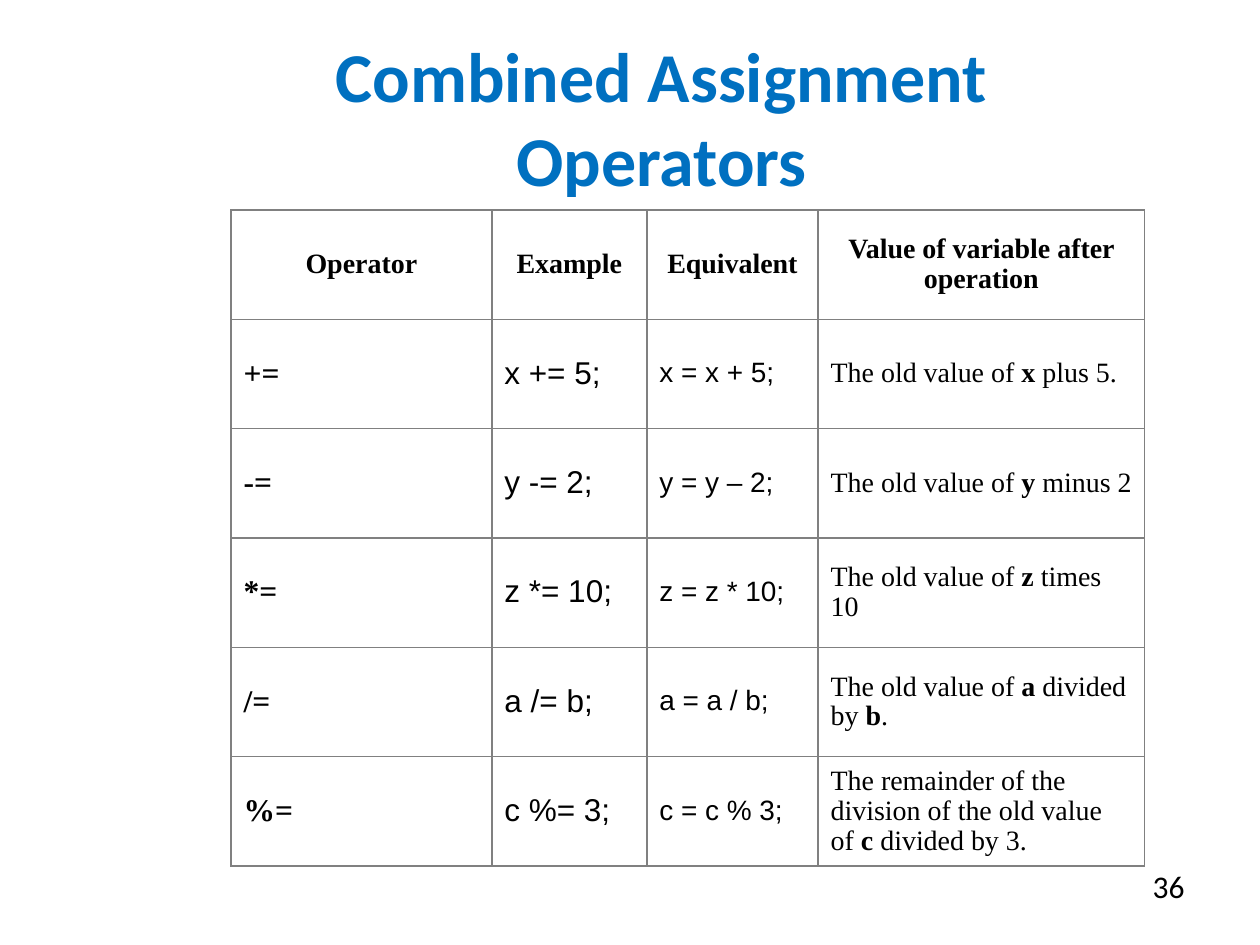
from lxml.etree import SubElement
from pptx import Presentation
from pptx.dml.color import RGBColor
from pptx.enum.text import MSO_ANCHOR, PP_ALIGN
from pptx.oxml.ns import qn
from pptx.util import Inches, Pt

COLS, ROWS = 60, 45
SERIF, SANS, BODY = "Times New Roman", "Arial", "Calibri"
HEADS = ["Operator", "Example", "Equivalent",
         "Value of variable after operation"]
# Underscores enclose bold words.
RULES = [
    ["+=", "x += 5;", "x = x + 5;", "The old value of _x_ plus 5."],
    ["-=", "y -= 2;", "y = y – 2;", "The old value of _y_ minus 2"],
    ["*=", "z *= 10;", "z = z * 10;", "The old value of _z_ times 10"],
    ["/=", "a /= b;", "a = a / b;", "The old value of _a_ divided by _b_."],
    ["%=", "c %= 3;", "c = c % 3;",
     "The remainder of the division of the old value of _c_ divided by 3."],
]
HEAD = dict(name=SERIF, size=Pt(16), bold=True)
STYLES = [
    dict(name=SERIF, size=Pt(18), bold=True),
    dict(name=SANS, size=Pt(18), bold=False),
    dict(name=SANS, size=Pt(16), bold=False),
    dict(name=SERIF, size=Pt(16), bold=False),
]


def color(code):
    return RGBColor.from_string(code)


class Deck:
    ink, edge, paper = "000000", "808080", "FFFFFF"

    def __init__(self):
        self.show = Presentation()
        self.show.slide_width, self.show.slide_height = Inches(10), Inches(7.5)
        self.slide = self.show.slides.add_slide(self.show.slide_layouts[6])

    def place(self, left, top, width, height):
        """Turn grid columns and rows into slide lengths."""
        across = self.show.slide_width / COLS
        down = self.show.slide_height / ROWS
        return (round(left * across), round(top * down),
                round(width * across), round(height * down))

    def words(self, para, text, font, align, ink=None):
        """Fill a paragraph, with every second part in bold."""
        para.alignment = align
        for index, part in enumerate(text.split("_")):
            run = para.add_run()
            run.text = part
            for key, value in font.items():
                setattr(run.font, key, value)
            if index % 2:
                run.font.bold = True
            run.font.color.rgb = color(ink or self.ink)

    def text(self, area, text, font, align, anchor=MSO_ANCHOR.TOP, ink=None):
        frame = self.slide.shapes.add_textbox(*self.place(*area)).text_frame
        frame.word_wrap = True
        frame.vertical_anchor = anchor
        self.words(frame.paragraphs[0], text, font, align, ink)

    def border(self, cell):
        props = cell._tc.get_or_add_tcPr()
        for side in "LRTB":
            line = SubElement(props, qn(f"a:ln{side}"), w=str(Pt(1)))
            fill = SubElement(line, qn("a:solidFill"))
            SubElement(fill, qn("a:srgbClr"), val=self.edge)

    def cell(self, cell, text, font, align):
        self.border(cell)
        cell.fill.solid()
        cell.fill.fore_color.rgb = color(self.paper)
        cell.vertical_anchor = MSO_ANCHOR.MIDDLE
        para = cell.text_frame.paragraphs[0]
        para.line_spacing = 0.96
        self.words(para, text, font, align)

    def table(self, area, widths, heads, rows):
        table = self.slide.shapes.add_table(
            len(rows) + 1, len(heads), *self.place(*area)).table
        table.first_row = table.horz_banding = False
        for col, width in zip(table.columns, widths):
            col.width = Inches(width)
        for col, head in enumerate(heads):
            self.cell(table.cell(0, col), head, HEAD, PP_ALIGN.CENTER)
        for row, texts in enumerate(rows, 1):
            for col, (text, font) in enumerate(zip(texts, STYLES)):
                self.cell(table.cell(row, col), text, font, PP_ALIGN.LEFT)


def main():
    deck = Deck()
    deck.text((11, 1.8, 41, 7.5), "Combined Assignment Operators",
              dict(name=BODY, size=Pt(40), bold=True), PP_ALIGN.CENTER,
              MSO_ANCHOR.MIDDLE, "0070C0")
    deck.table((11, 10, 43.5, 31.25), [2.07, 1.23, 1.36, 2.59], HEADS, RULES)
    deck.text((43, 41, 14, 3.1), "36", dict(name=BODY, size=Pt(18)),
              PP_ALIGN.RIGHT)
    deck.show.save("out.pptx")


if __name__ == "__main__":
    main()
